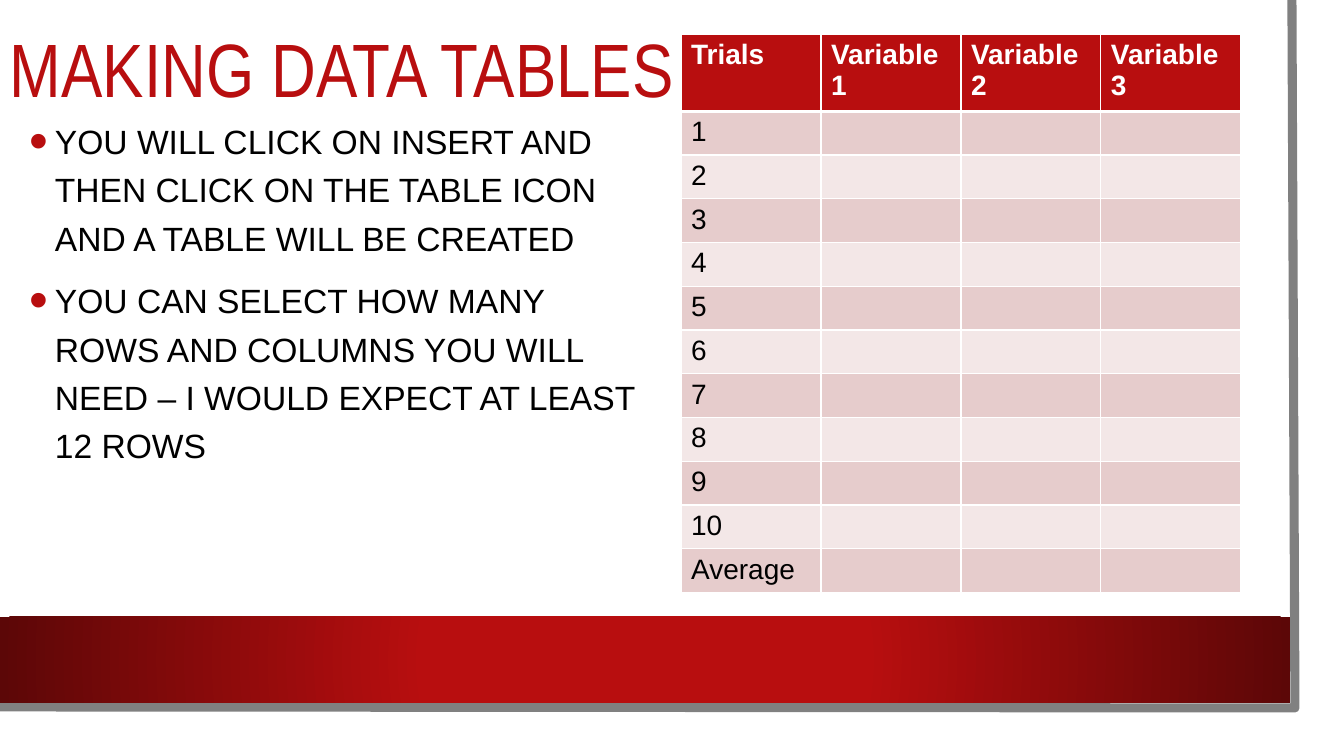
import lxml.etree
import pptx
import pptx.dml.color
import pptx.enum.shapes
import pptx.enum.text
import pptx.oxml
import pptx.oxml.ns
import pptx.util

RGBColor = pptx.dml.color.RGBColor

TITLE = "MAKING DATA TABLES"
STEPS = [
    "YOU WILL CLICK ON INSERT AND THEN CLICK ON THE TABLE ICON AND A TABLE WILL BE CREATED",
    "YOU CAN SELECT HOW MANY ROWS AND COLUMNS YOU WILL NEED – I WOULD EXPECT AT LEAST 12 ROWS",
]
HEADINGS = ["Trials", "Variable 1", "Variable 2", "Variable 3"]
TRIALS = [str(trial) for trial in range(1, 11)] + ["Average"]

RED = RGBColor(0xB8, 0x0E, 0x0F)
DARK_RED = RGBColor(0x5C, 0x07, 0x07)
PINK = RGBColor(0xE6, 0xCC, 0xCC)
PALE_PINK = RGBColor(0xF3, 0xE7, 0xE7)
GREY = RGBColor(0x80, 0x80, 0x80)
WHITE = RGBColor(0xFF, 0xFF, 0xFF)
BLACK = RGBColor(0, 0, 0)

PX = 914400 / 100.8
SHEET_BOX = (0, 0, 1320, 733)
EDGE_POINTS = [(1292, 0), (1295, 708), (-3, 707)]
BAND_BOX = (0, 617, 1290, 86)
TITLE_BOX = (0, 9, 1146, 128)
STEPS_BOX = (20, 108, 642, 459)
TABLE_BOX = (681, 34, 560, 497)
HANG = 25


def emu(*lengths):
    return [round(length * PX) for length in lengths]


def xml(tag, body):
    return pptx.oxml.parse_xml(
        f'<a:{tag} {pptx.oxml.ns.nsdecls("a")}>{body}</a:{tag}>')


def add_rectangle(slide, box, color):
    rectangle = slide.shapes.add_shape(
        pptx.enum.shapes.MSO_SHAPE.RECTANGLE, *emu(*box))
    rectangle.shadow.inherit = False
    rectangle.fill.solid()
    rectangle.fill.fore_color.rgb = color
    rectangle.line.fill.background()
    return rectangle


def add_text_frame(slide, box):
    frame = slide.shapes.add_textbox(*emu(*box)).text_frame
    frame.word_wrap = True
    return frame


def set_font(paragraph, name, size, color, bold=False):
    font = paragraph.font
    font.name, font.size, font.bold = name, pptx.util.Pt(size), bold
    font.color.rgb = color


def add_backdrop(slide):
    add_rectangle(slide, SHEET_BOX, WHITE)

    builder = slide.shapes.build_freeform(*EDGE_POINTS[0], scale=PX)
    builder.add_line_segments(EDGE_POINTS[1:], close=False)
    edge = builder.convert_to_shape()
    edge.shadow.inherit = False
    edge.fill.background()
    edge.line.color.rgb = GREY
    edge.line.width = pptx.util.Pt(6.5)

    band = add_rectangle(slide, BAND_BOX, RED)
    properties = band.fill._xPr
    solid = properties.find(pptx.oxml.ns.qn("a:solidFill"))
    stops = "".join(f'<a:gs pos="{share * 1000}"><a:srgbClr val="{color}"/></a:gs>'
                    for share, color in [(34, RED), (100, DARK_RED)])
    properties.replace(solid, xml(
        "gradFill",
        f'<a:gsLst>{stops}</a:gsLst><a:path path="circle">'
        '<a:fillToRect l="50000" t="50000" r="50000" b="50000"/></a:path>'))


def add_title(slide):
    frame = add_text_frame(slide, TITLE_BOX)
    frame.vertical_anchor = pptx.enum.text.MSO_ANCHOR.MIDDLE
    title = frame.paragraphs[0]
    title.text = TITLE
    title.line_spacing = 0.9
    set_font(title, "Arial Narrow", 54, RED)


def add_steps(slide):
    frame = add_text_frame(slide, STEPS_BOX)
    hang, = emu(HANG)
    for index, step in enumerate(STEPS):
        paragraph = frame.add_paragraph() if index else frame.paragraphs[0]
        paragraph.text = step
        paragraph.line_spacing = 1.2
        if index:
            paragraph.space_before = pptx.util.Pt(10)
        properties = paragraph._p.get_or_add_pPr()
        properties.set("marL", str(hang))
        properties.set("indent", str(-hang))
        bullet = xml("pPr", f'<a:buClr><a:srgbClr val="{RED}"/></a:buClr>'
                     '<a:buSzPct val="160000"/><a:buFont typeface="Arial"/>'
                     '<a:buChar char="•"/>')
        properties.extend(list(bullet))
        set_font(paragraph, "Arial", 24, BLACK)


def set_borders(cell, bottom):
    properties = cell._tc.get_or_add_tcPr()
    for position, (side, points) in enumerate(
            [("lnL", 1), ("lnR", 1), ("lnT", 1), ("lnB", bottom)]):
        border = xml(side, f'<a:solidFill><a:srgbClr val="{WHITE}"/></a:solidFill>')
        border.set("w", str(pptx.util.Pt(points)))
        properties.insert(position, border)


def add_trials(slide):
    rows = [HEADINGS] + [[trial] + [""] * (len(HEADINGS) - 1) for trial in TRIALS]
    table = slide.shapes.add_table(len(rows), len(HEADINGS), *emu(*TABLE_BOX)).table
    for row, texts in enumerate(rows):
        header = row == 0
        fill = RED if header else PINK if row % 2 else PALE_PINK
        for column, text in enumerate(texts):
            cell = table.cell(row, column)
            cell.text = text
            cell.fill.solid()
            cell.fill.fore_color.rgb = fill
            set_font(cell.text_frame.paragraphs[0], "Arial", 20,
                     WHITE if header else BLACK, header)
            set_borders(cell, 3 if header else 1)


def main():
    deck = pptx.Presentation()
    deck.slide_width, deck.slide_height = emu(1344, 756)
    slide = deck.slides.add_slide(deck.slide_layouts[6])
    add_backdrop(slide)
    add_title(slide)
    add_steps(slide)
    add_trials(slide)
    deck.save("out.pptx")


if __name__ == "__main__":
    main()
